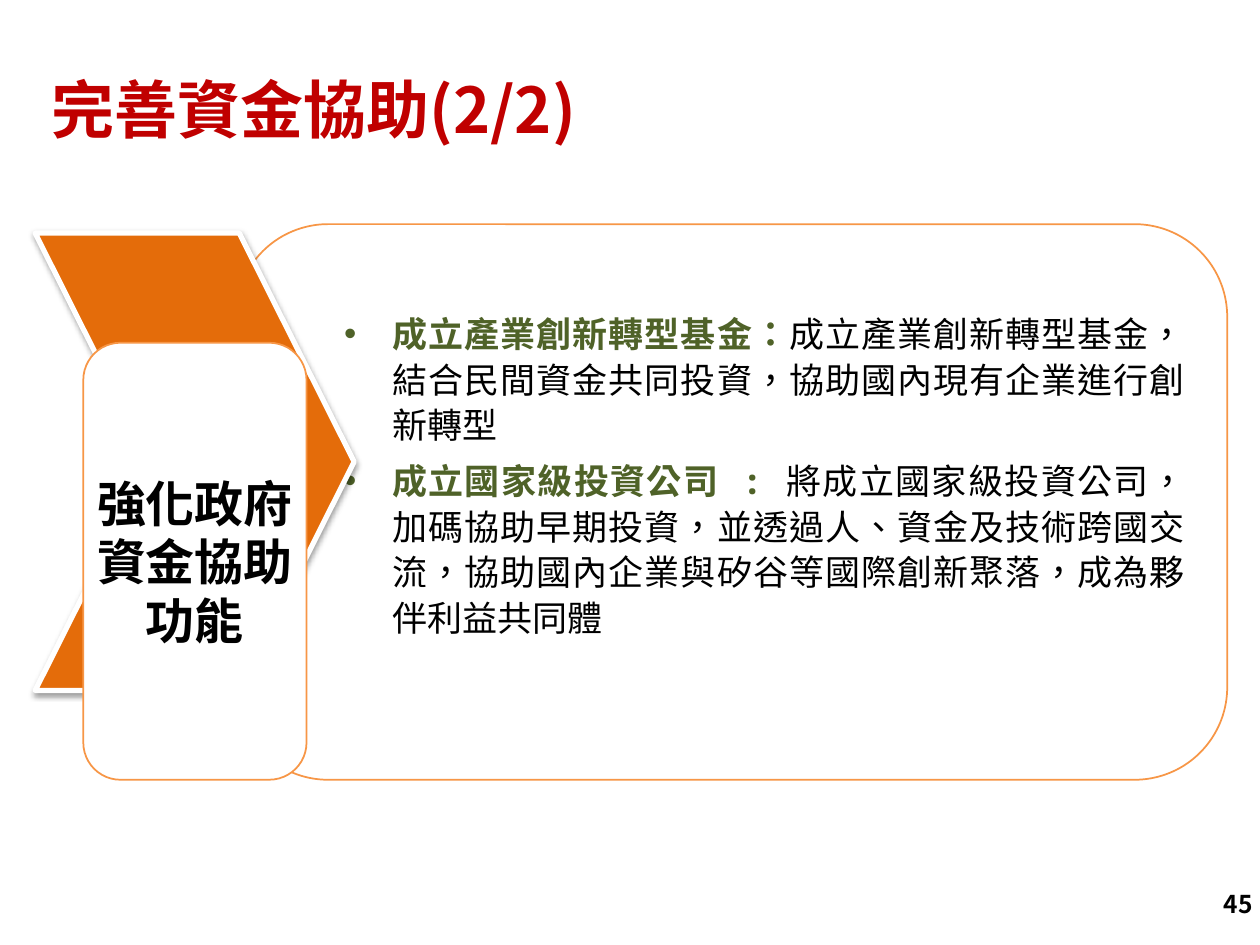
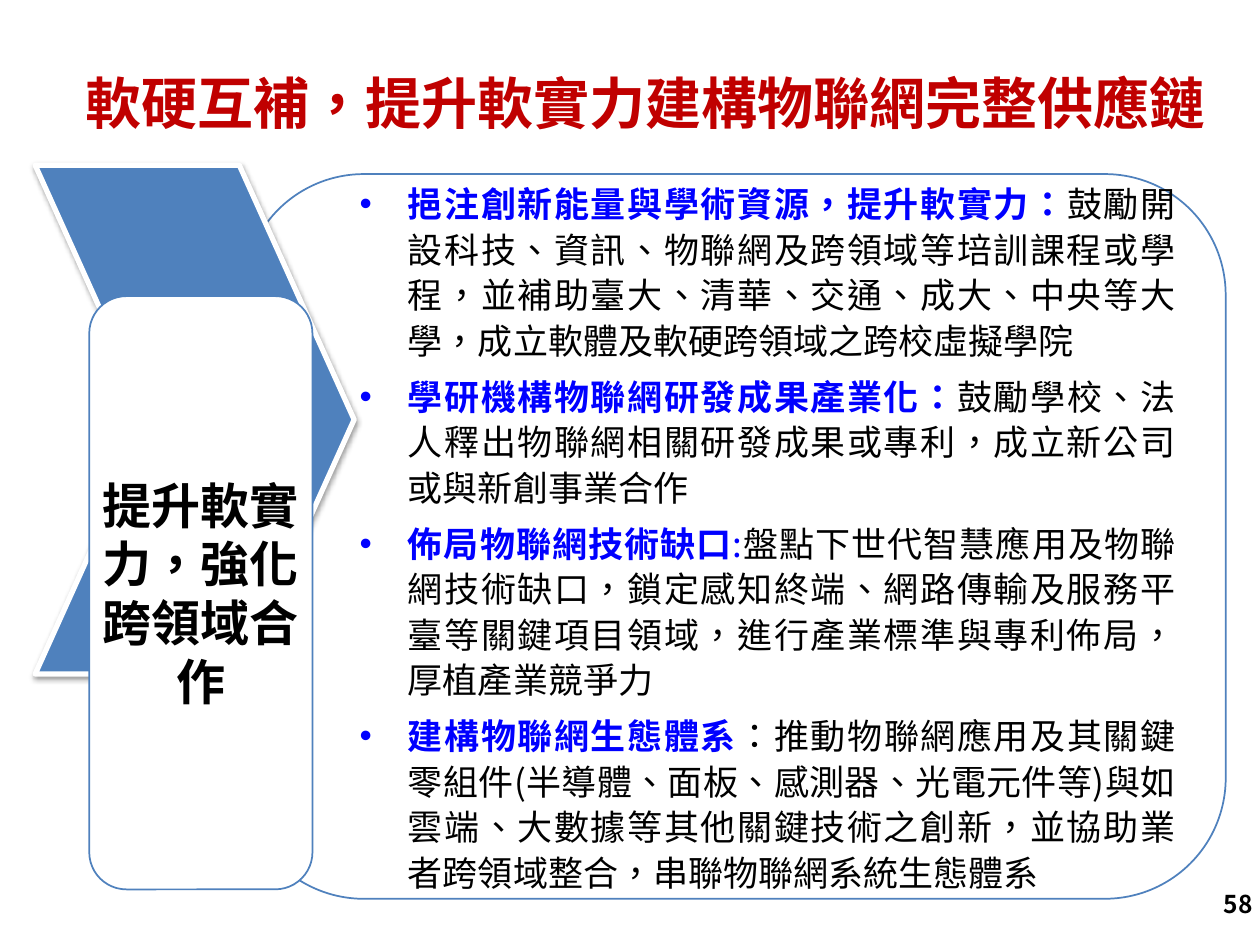
"""Build two policy slides: a chevron with a label beside a card of bullets."""
from dataclasses import dataclass

from lxml import etree
from pptx import Presentation
from pptx import util as u
from pptx.dml.color import RGBColor
from pptx.enum import shapes, text
from pptx.oxml.ns import qn


@dataclass(frozen=True)
class Theme:
    """Colours, fonts and type sizes shared by the slides."""
    sans: str = "Noto Sans CJK SC"
    mono: str = "Noto Sans Mono"
    bullet_font: str = "Arial"
    language: str = "zh-TW"
    title: str = "C00000"
    ink: str = "000000"
    paper: str = "FFFFFF"
    orange: str = "E46C0A"
    orange_line: str = "F79646"
    blue: str = "4F81BD"
    green_lead: str = "4F6228"
    blue_lead: str = "0000FF"
    body_size: int = 20
    label_size: int = 28
    number_size: int = 14
    line_pitch: int = 26
    bullet_gap: int = 6


THEME = Theme()


@dataclass(frozen=True)
class Box:
    """A frame in centimetres."""
    left: float
    top: float
    width: float
    height: float

    def lengths(self) -> tuple:
        """Return the frame as slide lengths."""
        return tuple(u.Cm(side) for side in (self.left, self.top, self.width, self.height))


@dataclass(frozen=True)
class Span:
    """A stretch of text with one format."""
    words: str
    color: str = THEME.ink
    bold: bool = False
    font: str = THEME.sans


@dataclass(frozen=True)
class Topic:
    """The content and measures of one slide."""
    title: str
    title_size: int
    title_box: Box
    card_box: Box
    chevron_box: Box
    label_box: Box
    label: str
    accent: str
    outline: str
    bullets: tuple
    number: str
    card_bottom: float = 0


def lead(words: str, color: str, font: str = THEME.sans) -> Span:
    """Return the bold opening of a bullet."""
    return Span(words, color, True, font)


TOPICS = (
    Topic(
        title="完善資金協助(2/2)",
        title_size=36,
        title_box=Box(0.79, 0.58, 24.61, 3.4),
        card_box=Box(4.75, 4.52, 19.99, 11.2),
        chevron_box=Box(0.71, 4.7, 6.43, 9.22),
        label_box=Box(1.68, 6.91, 4.5, 8.81),
        label="強化政府資金協助功能",
        accent=THEME.orange,
        outline=THEME.orange_line,
        bullets=(
            (lead("成立產業創新轉型基金：", THEME.green_lead, THEME.mono),
             Span("成立產業創新轉型基金，結合民間資金共同投資，協助國內現有企業進行創新轉型")),
            (lead("成立國家級投資公司 : ", THEME.green_lead, THEME.mono),
             Span("將成立國家級投資公司，加碼協助早期投資，並透過人、資金及技術跨國交流，"
                  "協助國內企業與矽谷等國際創新聚落，成為夥伴利益共同體")),
        ),
        number="45",
        card_bottom=1.13,
    ),
    Topic(
        title="軟硬互補，提升軟實力建構物聯網完整供應鏈",
        title_size=32,
        title_box=Box(1.47, 0.81, 24.61, 2.67),
        card_box=Box(4.9, 3.51, 19.81, 14.61),
        chevron_box=Box(0.71, 3.33, 6.43, 10.26),
        label_box=Box(1.8, 5.97, 4.5, 11.96),
        label="提升軟實力，強化跨領域合作",
        accent=THEME.blue,
        outline=THEME.blue,
        bullets=(
            (lead("挹注創新能量與學術資源，提升軟實力：", THEME.blue_lead),
             Span("鼓勵開設科技、資訊、物聯網及跨領域等培訓課程或學程，並補助臺大、清華、"
                  "交通、成大、中央等大學，成立軟體及軟硬跨領域之跨校虛擬學院")),
            (lead("學研機構物聯網研發成果產業化：", THEME.blue_lead),
             Span("鼓勵學校、法人釋出物聯網相關研發成果或專利，成立新公司或與新創事業合作")),
            (lead("佈局物聯網技術缺口", THEME.blue_lead),
             Span(":", THEME.blue_lead),
             Span("盤點下世代智慧應用及物聯網技術缺口，鎖定感知終端、網路傳輸及服務平臺等"
                  "關鍵項目領域，進行產業標準與專利佈局，厚植產業競爭力")),
            (lead("建構物聯網生態體系", THEME.blue_lead),
             Span("：推動物聯網應用及其關鍵零組件(半導體、面板、感測器、光電元件等)與如雲端、"
                  "大數據等其他關鍵技術之創新，並協助業者跨領域整合，串聯物聯網系統生態體系")),
        ),
        number="58",
    ),
)


def add_bullet(paragraph) -> None:
    """Give a paragraph a hanging round bullet."""
    props = paragraph._p.get_or_add_pPr()
    props.set("marL", str(u.Cm(2)))
    props.set("indent", str(u.Cm(-0.97)))
    etree.SubElement(props, qn("a:buFont")).set("typeface", THEME.bullet_font)
    etree.SubElement(props, qn("a:buChar")).set("char", "•")


def write(shape, paragraphs, *, size: int, align=text.PP_ALIGN.LEFT, spacing=None,
          gap: int = 0, bulleted: bool = False, insets=None) -> None:
    """Fill a shape with paragraphs of spans in the given format."""
    frame = shape.text_frame
    frame.word_wrap = True
    frame.vertical_anchor = text.MSO_ANCHOR.MIDDLE
    if insets:
        (frame.margin_left, frame.margin_top,
         frame.margin_right, frame.margin_bottom) = (u.Cm(side) for side in insets)
    for index, spans in enumerate(paragraphs):
        paragraph = frame.add_paragraph() if index else frame.paragraphs[0]
        if bulleted:
            add_bullet(paragraph)
        paragraph.alignment = align
        paragraph.line_spacing = spacing
        paragraph.space_before = u.Pt(gap if index else 0)
        for span in spans:
            run = paragraph.add_run()
            run.text = span.words
            run.font.size = u.Pt(size)
            run.font.bold = span.bold
            run.font.name = span.font
            run.font.color.rgb = RGBColor.from_string(span.color)
            props = run._r.get_or_add_rPr()
            props.set("lang", THEME.language)
            etree.SubElement(props, qn("a:ea")).set("typeface", span.font)


def add_panel(slide, preset, box: Box, *, fill: str, line: str, weight: float):
    """Draw a filled and outlined preset shape."""
    panel = slide.shapes.add_shape(preset, *box.lengths())
    panel.shadow.inherit = False
    panel.fill.solid()
    panel.fill.fore_color.rgb = RGBColor.from_string(fill)
    panel.line.color.rgb = RGBColor.from_string(line)
    panel.line.width = u.Pt(weight)
    return panel


def add_card(slide, box: Box, outline: str):
    """Draw a white card with rounded corners."""
    return add_panel(slide, shapes.MSO_SHAPE.ROUNDED_RECTANGLE, box,
                     fill=THEME.paper, line=outline, weight=1)


def add_chevron(slide, box: Box, accent: str) -> None:
    """Draw the chevron with its soft shadow."""
    chevron = add_panel(slide, shapes.MSO_SHAPE.CHEVRON, box,
                        fill=accent, line=THEME.paper, weight=3)
    chevron.adjustments[0] = 0.36
    effects = chevron._element.spPr.find(qn("a:effectLst"))
    shadow = etree.SubElement(effects, qn("a:outerShdw"), blurRad="40000", dist="20000",
                              dir="5400000", rotWithShape="0")
    shade = etree.SubElement(shadow, qn("a:srgbClr"), val=THEME.ink)
    etree.SubElement(shade, qn("a:alpha"), val="38000")


def add_topic(deck, topic: Topic) -> None:
    """Add one slide for a topic."""
    slide = deck.slides.add_slide(deck.slide_layouts[6])
    heading = slide.shapes.add_textbox(*topic.title_box.lengths())
    write(heading, [[Span(topic.title, THEME.title, True)]], size=topic.title_size, spacing=0.9)

    card = add_card(slide, topic.card_box, topic.outline)
    write(card, topic.bullets, size=THEME.body_size, align=text.PP_ALIGN.JUSTIFY,
          spacing=u.Pt(THEME.line_pitch), gap=THEME.bullet_gap, bulleted=True,
          insets=(0.61, 0, 0.3, topic.card_bottom))
    add_chevron(slide, topic.chevron_box, topic.accent)
    label = add_card(slide, topic.label_box, topic.outline)
    write(label, [[Span(topic.label, bold=True, font=THEME.mono)]], size=THEME.label_size,
          align=text.PP_ALIGN.CENTER, insets=(0, 0, 0, 0))

    number = slide.shapes.add_textbox(*Box(19.58, 17.7, 5.92, 1.02).lengths())
    write(number, [[Span(topic.number, bold=True)]], size=THEME.number_size,
          align=text.PP_ALIGN.RIGHT)


def main() -> None:
    """Build and save the deck."""
    deck = Presentation()
    deck.slide_width, deck.slide_height = u.Cm(25.4), u.Cm(19.05)
    for topic in TOPICS:
        add_topic(deck, topic)
    deck.save("out.pptx")


if __name__ == "__main__":
    main()
